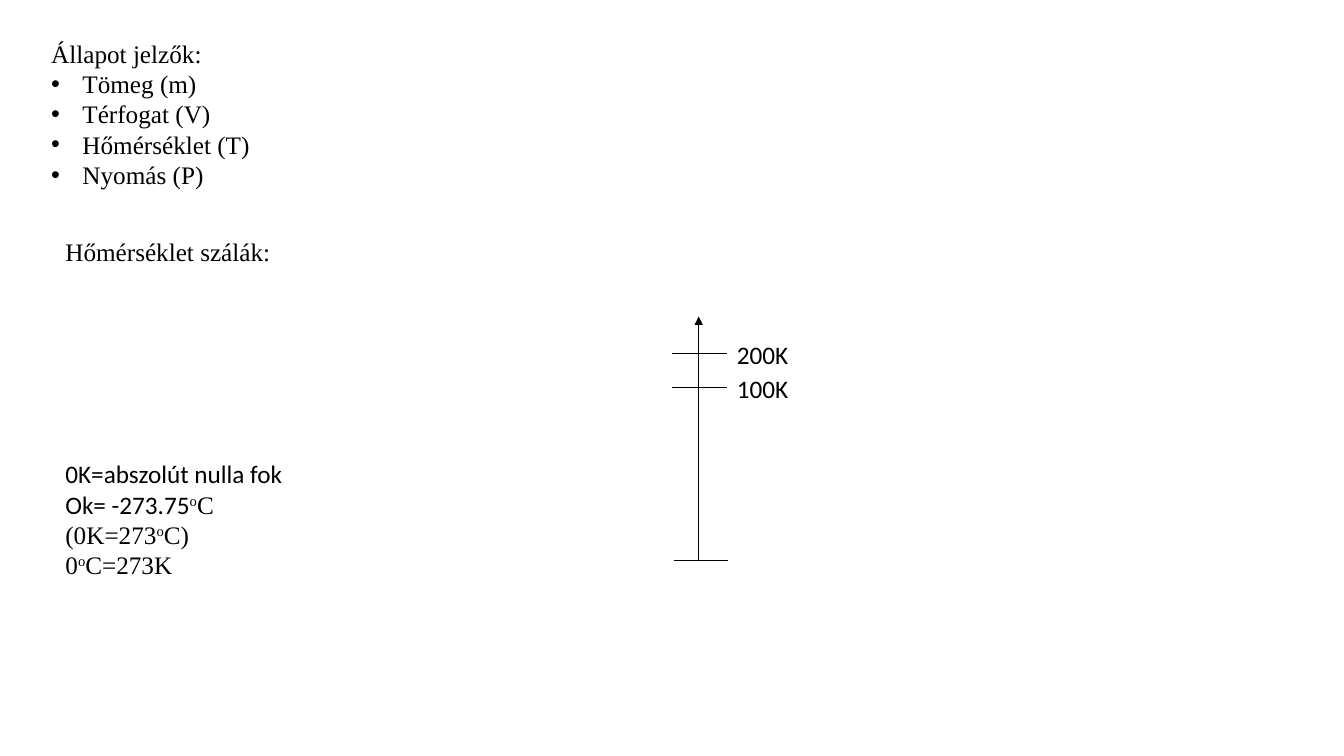
"""Builds the slide on state variables and the Kelvin temperature scale."""
import pptx
import pptx.dml.color
import pptx.enum.shapes
import pptx.enum.text
import pptx.oxml
import pptx.oxml.ns
import pptx.util

Inches = pptx.util.Inches
BLACK = pptx.dml.color.RGBColor(0, 0, 0)
WHITE = pptx.dml.color.RGBColor(255, 255, 255)
SERIF = "Times New Roman"
SANS = "Calibri"


class SlideWriter:
    """Holds the text and line style together with the current slide."""

    def __init__(self, slide):
        self.slide = slide
        self.size = pptx.util.Pt(18)
        self.weight = pptx.util.Pt(0.5)
        self.indent = Inches(0.31)

    def add_xml(self, parent, tag, **attributes):
        """Append a drawing element with the given attributes."""
        child = pptx.oxml.ns.qn("a:" + tag)
        element = parent.makeelement(child, attributes)
        parent.append(element)

    def text_frame(self, left, top, width, height):
        """Add a wrapping text box and return its frame."""
        box = self.slide.shapes.add_textbox(
            Inches(left), Inches(top), Inches(width), Inches(height))
        frame = box.text_frame
        frame.word_wrap = True
        frame.auto_size = pptx.enum.text.MSO_AUTO_SIZE.SHAPE_TO_FIT_TEXT
        return frame

    def run(self, paragraph, text, font=SERIF, raised=False):
        """Add one styled run, optionally as superscript."""
        run = paragraph.add_run()
        run.text = text
        run.font.size = self.size
        run.font.name = font
        run.font.color.rgb = BLACK
        if raised:
            run.font._element.set("baseline", "30000")

    def bullet(self, paragraph, text):
        """Turn a paragraph into a bulleted item."""
        properties = paragraph._p.get_or_add_pPr()
        properties.set("marL", str(self.indent))
        properties.set("indent", str(-self.indent))
        self.add_xml(properties, "buFont", typeface="Arial")
        self.add_xml(properties, "buChar", char="•")
        self.run(paragraph, text)

    def label(self, left, top, width, text, font=SERIF):
        """Add a single-line text box."""
        frame = self.text_frame(left, top, width, 0.4)
        self.run(frame.paragraphs[0], text, font)

    def line(self, start, end, arrow=False):
        """Draw a thin straight line, optionally with an arrowhead."""
        connector = self.slide.shapes.add_connector(
            pptx.enum.shapes.MSO_CONNECTOR.STRAIGHT,
            *(Inches(value) for value in (*start, *end)))
        connector.line.color.rgb = BLACK
        connector.line.width = self.weight
        if arrow:
            self.add_xml(connector.line._get_or_add_ln(), "tailEnd", type="triangle")
        self.add_xml(connector._element.spPr, "effectLst")


def main():
    """Create the presentation and save it."""
    presentation = pptx.Presentation()
    presentation.slide_width = Inches(13.33)
    presentation.slide_height = Inches(7.5)
    slide = presentation.slides.add_slide(presentation.slide_layouts[6])
    slide.background.fill.solid()
    slide.background.fill.fore_color.rgb = WHITE
    writer = SlideWriter(slide)

    state_variables = writer.text_frame(0.41, 0.33, 12.83, 1.62)
    writer.run(state_variables.paragraphs[0], "Állapot jelzők:")
    for quantity in ("Tömeg (m)", "Térfogat (V)", "Hőmérséklet (T)", "Nyomás (P)"):
        writer.bullet(state_variables.add_paragraph(), quantity)

    writer.label(0.55, 2.3, 12.53, "Hőmérséklet szálák:")

    writer.line((6.93, 5.57), (6.93, 3.14), arrow=True)
    for tick_left, tick_top, reading in (
            (6.67, 3.51, "200K"), (6.67, 3.84, "100K"), (6.68, 5.56, None)):
        writer.line((tick_left, tick_top), (tick_left + 0.54, tick_top))
        if reading:
            writer.label(7.21, tick_top - 0.19, 0.71, reading, SANS)

    conversions = writer.text_frame(0.55, 4.5, 4.95, 1.31)
    writer.run(conversions.paragraphs[0], "0K=abszolút nulla fok", SANS)
    equations = conversions.add_paragraph()
    for number, (before, after, font) in enumerate((
            ("Ok= -273.75", "C", SANS),
            ("(0K=273", "C)", SERIF),
            ("0", "C=273K", SERIF))):
        if number:
            equations.add_line_break()
        writer.run(equations, before, font)
        writer.run(equations, "o", raised=True)
        writer.run(equations, after)

    presentation.save("out.pptx")


if __name__ == "__main__":
    main()
